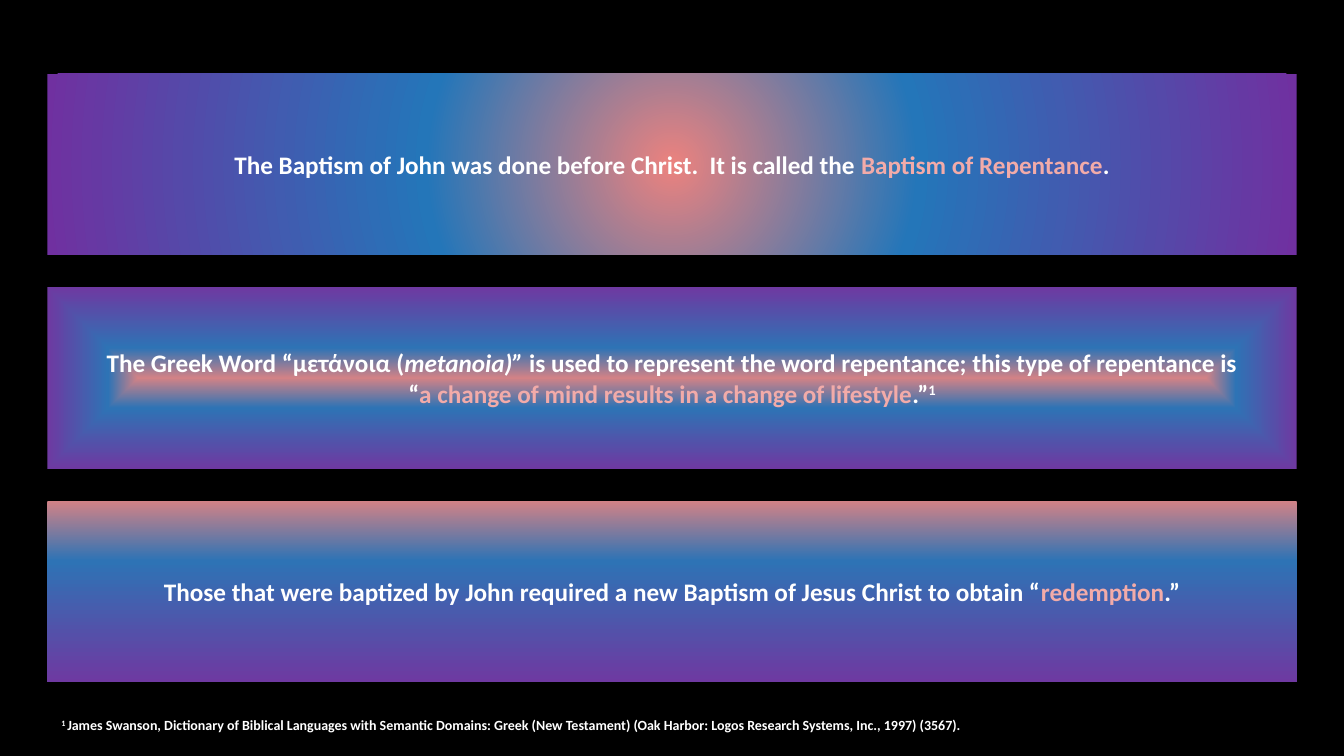
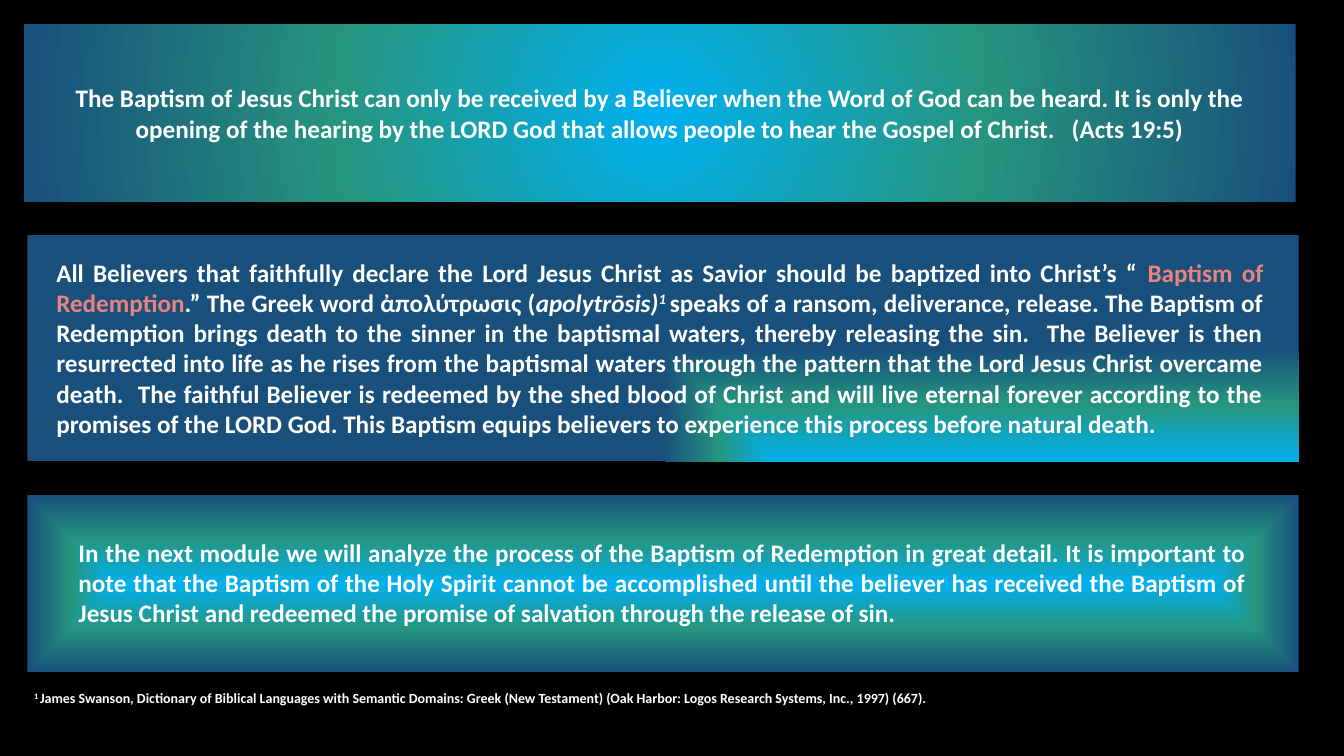
from dataclasses import dataclass

from pptx import Presentation
from pptx.dml.color import RGBColor
from pptx.enum.shapes import MSO_SHAPE
from pptx.enum.text import MSO_ANCHOR, PP_ALIGN
from pptx.oxml import parse_xml
from pptx.oxml.ns import nsdecls, qn
from pptx.slide import Slide
from pptx.text.text import TextFrame
from pptx.util import Inches, Pt

SLIDE_WIDTH, SLIDE_HEIGHT = Inches(13.333), Inches(7.5)


@dataclass(frozen=True)
class Theme:
    font: str = "Calibri"
    body_size: int = 18
    note_size: int = 10
    background: str = "000000"
    text: str = "FFFFFF"
    pink: str = "F2ABA9"
    coral: str = "EC827E"
    glow: tuple = ((0, "EC827E"), (39, "2476B9"), (100, "7030A0"))
    dusk: tuple = ((0, "D28286"), (33, "2E73B5"), (100, "6E39A1"))
    sea: tuple = ((0, "00B0F0"), (50, "26957F"), (100, "184F7B"))


THEME = Theme()

# Gradient shapes
DOWNWARD = '<a:lin ang="5400000" scaled="0"/>'
FOCUS = ('<a:path path="{}"><a:fillToRect l="{}" t="{}" r="{}" b="{}"/></a:path>')
ROUND = FOCUS.format("circle", *[50000] * 4)
FRAME = FOCUS.format("rect", *[50000] * 4)
CORNER = FOCUS.format("rect", 100000, 100000, 0, 0)


@dataclass(frozen=True)
class Span:
    text: str
    color: str = ""
    italic: bool = False
    raised: bool = False


@dataclass(frozen=True)
class Area:
    """Left, top, width and height as percentages of the slide."""
    left: float
    top: float
    width: float
    height: float

    def emu(self) -> tuple[int, int, int, int]:
        return (int(SLIDE_WIDTH * self.left / 100), int(SLIDE_HEIGHT * self.top / 100),
                int(SLIDE_WIDTH * self.width / 100), int(SLIDE_HEIGHT * self.height / 100))


@dataclass(frozen=True)
class Panel:
    left: float
    height: float
    stops: tuple
    direction: str
    paragraphs: tuple = ()


@dataclass(frozen=True)
class Passage:
    area: Area
    spans: tuple
    size: int = THEME.body_size
    align: PP_ALIGN = PP_ALIGN.JUSTIFY


@dataclass(frozen=True)
class Page:
    top: float
    width: float
    gap: float
    panels: tuple
    passages: tuple


def footnote(area: Area, number: int) -> Passage:
    source = ("James Swanson, Dictionary of Biblical Languages with Semantic Domains: Greek "
              "(New Testament) (Oak Harbor: Logos Research Systems, Inc., 1997) "
              f"({number}).")
    return Passage(area, (Span("1 ", raised=True), Span(source)),
                   THEME.note_size, PP_ALIGN.LEFT)


PAGES = (
    # Baptism of John
    Page(top=9.73, width=92.95, gap=4.27, panels=(
        Panel(3.53, 24, THEME.glow, ROUND, ((
            Span("The Baptism of John was done before Christ.  It is called the "),
            Span("Baptism of Repentance", THEME.pink),
            Span(".")),)),
        Panel(3.53, 24, THEME.dusk, FRAME, (
            (Span("The Greek Word “μετάνοια ("),
             Span("metanoia)” ", italic=True),
             Span("is used to represent the word repentance; this type of repentance is")),
            (Span("“"),
             Span("a change of mind results in a change of lifestyle", THEME.pink),
             Span(".”"),
             Span("1", raised=True)))),
        Panel(3.53, 24, THEME.dusk, DOWNWARD, ((
            Span("Those that were baptized by John required a new Baptism of Jesus Christ "
                 "to obtain “"),
            Span("redemption", THEME.pink),
            Span(".”")),)),
    ), passages=(footnote(Area(3.83, 94.13, 83.27, 3.6), 3567),)),
    # Baptism of Redemption
    Page(top=3.2, width=94.6, gap=4.47, panels=(
        Panel(1.8, 23.47, THEME.sea, ROUND, ((
            Span("The Baptism of Jesus Christ can only be received by a Believer when the "
                 "Word of God can be heard. It is only the opening of the hearing by the "
                 "LORD God that allows people to hear the Gospel of Christ.   (Acts 19:5)"),),)),
        Panel(2.03, 29.87, THEME.sea, CORNER),
        Panel(2.03, 23.47, THEME.sea, FRAME),
    ), passages=(
        footnote(Area(1.8, 90.6, 94.6, 3.6), 667),
        Passage(Area(3.45, 33.33, 91.3, 25.6), (
            Span("All Believers that faithfully declare the Lord Jesus Christ as Savior "
                 "should be baptized into Christ’s “ "),
            Span("Baptism of Redemption", THEME.coral),
            Span(".” The Greek word ἀπολύτρωσις ("),
            Span("apolytrōsis)", italic=True),
            Span("1 ", italic=True, raised=True),
            Span("speaks of a ransom, deliverance, release. The Baptism of Redemption brings "
                 "death to the sinner in the baptismal waters, thereby releasing the sin.  "
                 "The Believer is then resurrected into life as he rises from the baptismal "
                 "waters through the pattern that the Lord Jesus Christ overcame death.  The "
                 "faithful Believer is redeemed by the shed blood of Christ and will live "
                 "eternal forever according to the promises of the LORD God. This Baptism "
                 "equips believers to experience this process before natural death."))),
        Passage(Area(5.1, 70.4, 88.37, 13.47), (
            Span("In the next module we will analyze the process of the Baptism of Redemption "
                 "in great detail. It is important to note that the Baptism of the Holy Spirit "
                 "cannot be accomplished until the believer has received the Baptism of Jesus "
                 "Christ and redeemed the promise of salvation through the release of sin."),)),
    )),
)


def write(frame: TextFrame, paragraphs: tuple, size: int, align: PP_ALIGN) -> None:
    frame.word_wrap = True
    for index, spans in enumerate(paragraphs):
        paragraph = frame.paragraphs[0] if index == 0 else frame.add_paragraph()
        paragraph.alignment = align
        paragraph.font.name = THEME.font
        paragraph.font.size = Pt(size)
        paragraph.font.bold = True
        for span in spans:
            run = paragraph.add_run()
            run.text = span.text
            run.font.color.rgb = RGBColor.from_string(span.color or THEME.text)
            if span.italic:
                run.font.italic = True
            if span.raised:
                run._r.get_or_add_rPr().set("baseline", "30000")


def draw_panel(slide: Slide, panel: Panel, area: Area) -> None:
    shape = slide.shapes.add_shape(MSO_SHAPE.RECTANGLE, *area.emu())
    shape.shadow.inherit = False
    shape.line.fill.background()
    shape.fill.gradient()
    stops = "".join(f'<a:gs pos="{share * 1000}"><a:srgbClr val="{color}"/></a:gs>'
                    for share, color in panel.stops)
    gradient = parse_xml(f'<a:gradFill {nsdecls("a")} rotWithShape="1">'
                         f'<a:gsLst>{stops}</a:gsLst>{panel.direction}</a:gradFill>')
    properties = shape._element.spPr
    properties.replace(properties.find(qn("a:gradFill")), gradient)
    shape.text_frame.vertical_anchor = MSO_ANCHOR.MIDDLE
    write(shape.text_frame, panel.paragraphs, THEME.body_size, PP_ALIGN.CENTER)


def draw_page(slide: Slide, page: Page) -> None:
    # Panels stacked with equal gaps
    top = page.top
    for panel in page.panels:
        draw_panel(slide, panel, Area(panel.left, top, page.width, panel.height))
        top += panel.height + page.gap
    # Passages and footnote
    for passage in page.passages:
        box = slide.shapes.add_textbox(*passage.area.emu())
        write(box.text_frame, (passage.spans,), passage.size, passage.align)


def main() -> None:
    deck = Presentation()
    deck.slide_width, deck.slide_height = SLIDE_WIDTH, SLIDE_HEIGHT
    backdrop = deck.slide_master.background.fill
    backdrop.solid()
    backdrop.fore_color.rgb = RGBColor.from_string(THEME.background)
    blank = deck.slide_layouts.get_by_name("Blank")
    for page in PAGES:
        draw_page(deck.slides.add_slide(blank), page)
    deck.save("out.pptx")


if __name__ == "__main__":
    main()
